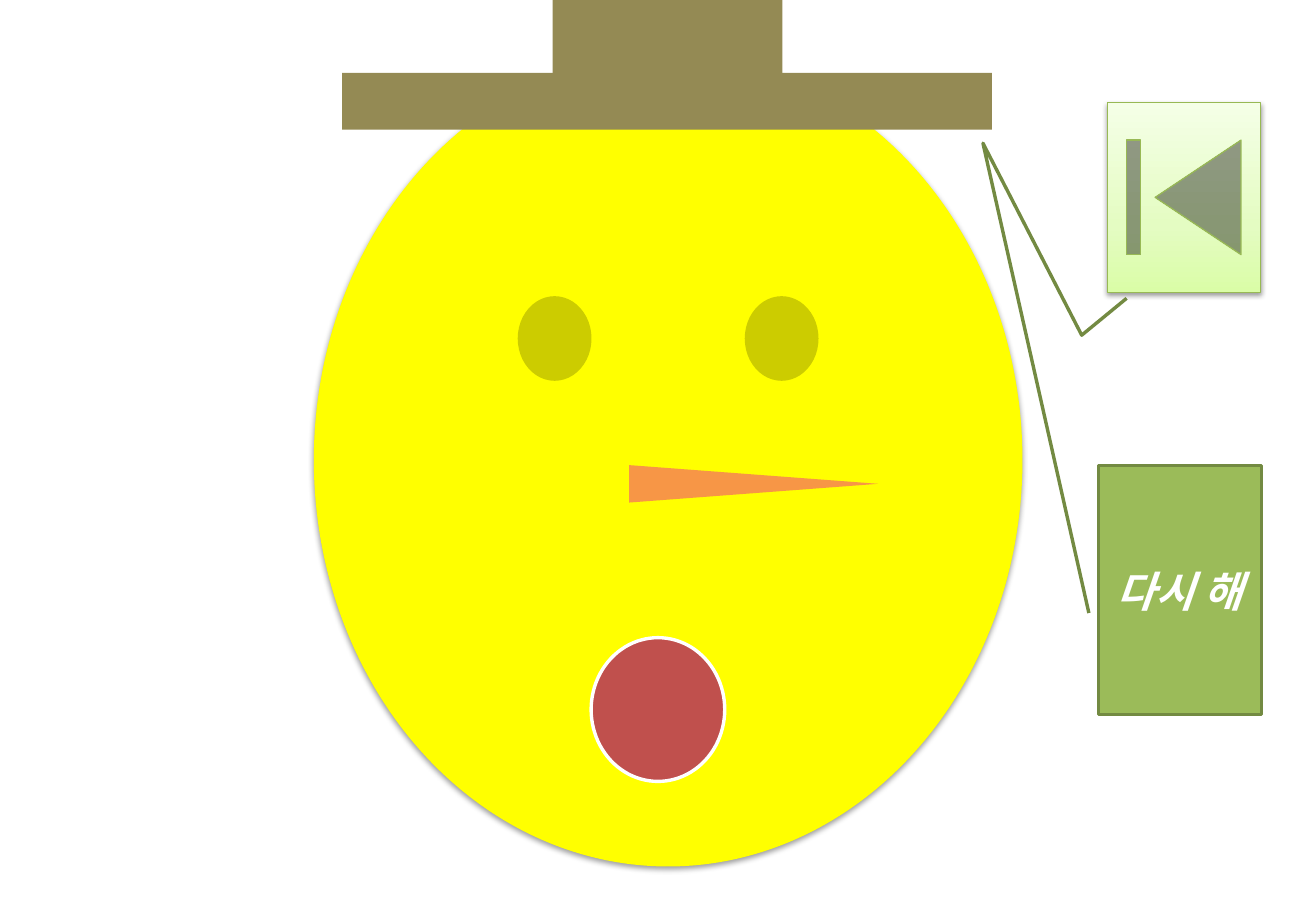
"""Build a slide with a face in a hat, a back button and a callout."""
import copy

import pptx
import pptx.dml.color
import pptx.enum.shapes
import pptx.enum.text
import pptx.oxml
import pptx.oxml.ns
import pptx.util
from lxml import etree

PX = 7620
FONT = "Noto Sans CJK KR"
SHAPES = pptx.enum.shapes.MSO_SHAPE
qn = pptx.oxml.ns.qn


def color(value):
    return pptx.dml.color.RGBColor.from_string(value)


def add_shape(kind, box, fill, line=None, line_width=0):
    shape = slide.shapes.add_shape(kind, *[length * PX for length in box])
    shape.shadow.inherit = False
    shape.fill.solid()
    shape.fill.fore_color.rgb = color(fill)
    if line:
        shape.line.color.rgb = color(line)
        shape.line.width = pptx.util.Pt(line_width)
    else:
        shape.line.fill.background()
    return shape


presentation = pptx.Presentation()
presentation.slide_width = 1300 * PX
presentation.slide_height = 900 * PX
slide = presentation.slides.add_slide(presentation.slide_layouts[6])

face = add_shape(SHAPES.SMILEY_FACE, (310, 53, 700, 803), "FFFF00")
face.adjustments[0] = 0.047

button = add_shape(SHAPES.ACTION_BUTTON_BEGINNING, (1094, 101, 151, 188), "E4FCC2", "98B955", 0.75)
button.fill.gradient()
button.fill.gradient_angle = 90
stop_list = button._element.spPr.find(".//" + qn("a:gsLst"))
stop_list.append(copy.deepcopy(stop_list[-1]))
gradient = [(0, "DAFDA7"), (0.35, "E4FCC2"), (1, "F5FFE7")]
for stop, (position, value) in zip(button.fill.gradient_stops, gradient):
    stop.position = position
    stop.color.rgb = color(value)

for shape in (face, button):
    effects = shape._element.spPr.find(qn("a:effectLst"))
    shadow = etree.SubElement(
        effects, qn("a:outerShdw"), blurRad=str(pptx.util.Pt(3.1)),
        dist=str(pptx.util.Pt(1.6)), dir="5400000", rotWithShape="0")
    shadow_color = etree.SubElement(shadow, qn("a:srgbClr"), val="000000")
    etree.SubElement(shadow_color, qn("a:alpha"), val="38000")

callout = add_shape(SHAPES.LINE_CALLOUT_3, (1085, 460, 161, 246), "9BBB59", "738A42", 2)
for index, value in enumerate([0.592, -0.058, -1.295, -0.708, -0.524, -0.102, -0.672, 0.174]):
    callout.adjustments[index] = value
text_frame = callout.text_frame
text_frame.text = "다시 해"
text_frame.word_wrap = False
text_frame.vertical_anchor = pptx.enum.text.MSO_ANCHOR.MIDDLE
paragraph = text_frame.paragraphs[0]
paragraph.alignment = pptx.enum.text.PP_ALIGN.CENTER
run = paragraph.runs[0]
run.font.size = pptx.util.Pt(25)
run.font.bold = True
run.font.italic = True
run.font.color.rgb = color("FFFFFF")
run.font.name = FONT
etree.SubElement(run._r.get_or_add_rPr(), qn("a:ea"), typeface=FONT)

mouth = add_shape(SHAPES.OVAL, (584, 630, 132, 142), "C0504D", "FFFFFF", 2)
nose = add_shape(SHAPES.ISOSCELES_TRIANGLE, (726, 355, 37, 246), "F79646")
nose.rotation = 90
hat_brim = add_shape(SHAPES.RECTANGLE, (338, 72, 642, 56), "948A54")
hat_crown = add_shape(SHAPES.RECTANGLE, (546, 0, 227, 72), "948A54")

presentation.save("out.pptx")
